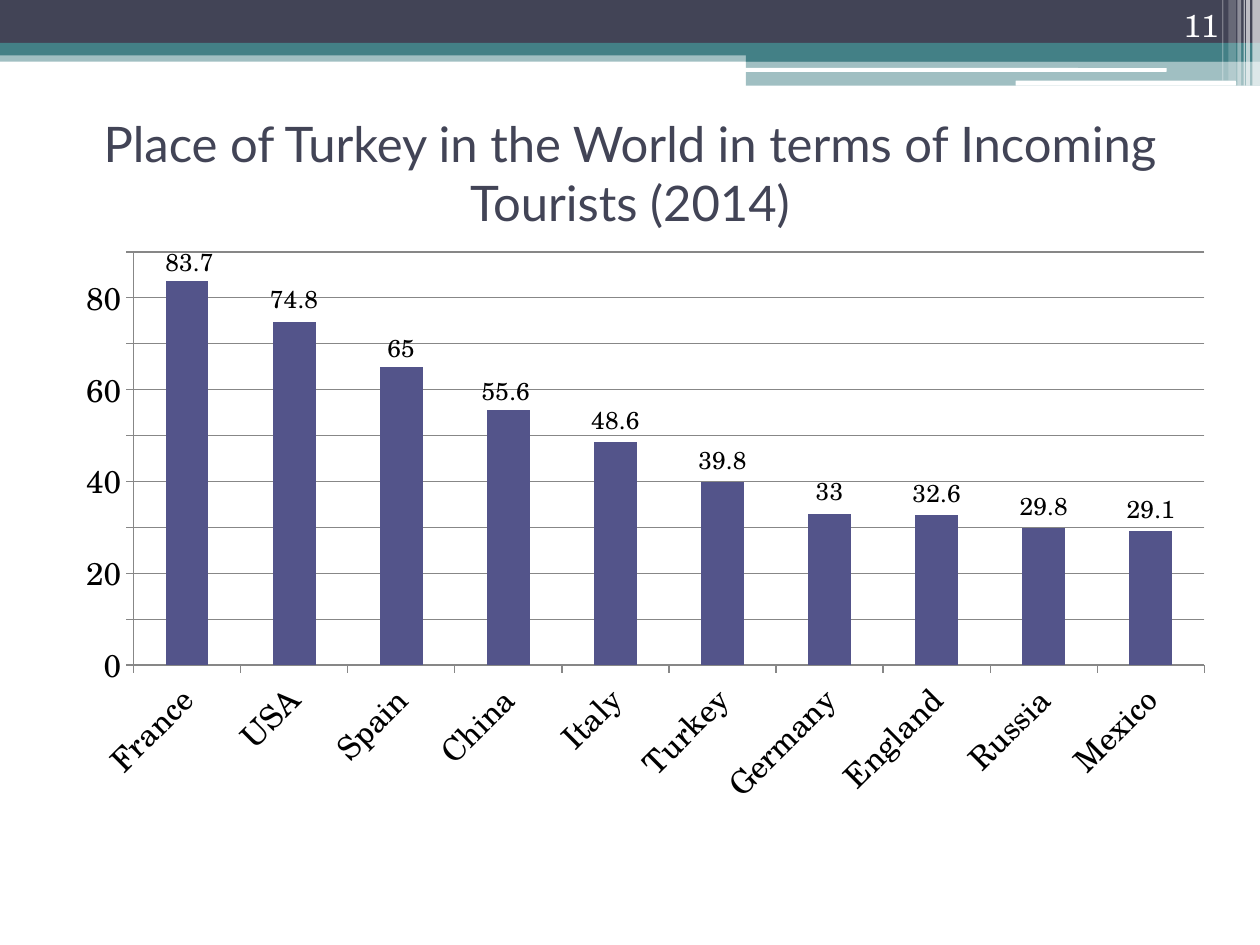
from pptx import Presentation
from pptx.chart.data import CategoryChartData
from pptx.dml.color import RGBColor
from pptx.enum.chart import XL_CHART_TYPE, XL_LABEL_POSITION, XL_TICK_MARK
from pptx.enum.shapes import MSO_SHAPE
from pptx.enum.text import MSO_ANCHOR, PP_ALIGN
from pptx.oxml.ns import qn
from pptx.util import Inches, Pt
from lxml import etree

RECT, ROUND = MSO_SHAPE.RECTANGLE, MSO_SHAPE.ROUNDED_RECTANGLE
COLUMN, OUT_END = XL_CHART_TYPE.COLUMN_CLUSTERED, XL_LABEL_POSITION.OUTSIDE_END
TICK_OUT = XL_TICK_MARK.OUTSIDE
MIDDLE, BOTTOM = MSO_ANCHOR.MIDDLE, MSO_ANCHOR.BOTTOM
CENTER, RIGHT = PP_ALIGN.CENTER, PP_ALIGN.RIGHT


class Theme:
    dark, teal, white = "424456", "438086", "FFFFFF"
    bar, grid, ink = "53548A", "878787", "000000"
    head, body = "Lato", "TeX Gyre Schola"
    big, mid, small = 28, 18, 14


# Content
TITLE = "Place of Turkey in the World in terms of Incoming Tourists (2014)"
PAGE = "11"
DATA = {
    "France": 83.7, "USA": 74.8, "Spain": 65, "China": 55.6, "Italy": 48.6,
    "Turkey": 39.8, "Germany": 33, "England": 32.6, "Russia": 29.8, "Mexico": 29.1,
}

# Chart frame, its plot area, and nudged labels, all in inches
FRAME = (0.5, 1.92, 9.25, 4.58)
PLOT = (0.56, 0.08, 8.5, 3.28)
NUDGE = {"France": (0.02, 0.03), "Spain": (0, 0.03), "China": (-0.02, 0.03)}

# Header bands: left, top, width, height, colour, opacity, shape
BANDS = [
    (0, 0.4, 10, 0.09, Theme.teal, 50, RECT),
    (0, 0, 10, 0.34, Theme.dark, 100, RECT),
    (0, 0.34, 10, 0.1, Theme.teal, 100, RECT),
    (5.92, 0.39, 4.08, 0.1, Theme.teal, 100, RECT),
    (5.92, 0.48, 4.08, 0.2, Theme.teal, 50, RECT),
    (5.91, 0.54, 3.35, 0.03, Theme.white, 100, ROUND),
    (8.06, 0.64, 1.75, 0.04, Theme.white, 100, ROUND),
]
# Stripes in the corner: left, width, height, opacity
STRIPES = [
    (9.94, 0.06, 0.68, 65), (9.89, 0.03, 0.68, 65), (9.87, 0.01, 0.68, 60),
    (9.82, 0.03, 0.68, 40), (9.75, 0.06, 0.64, 20), (9.7, 0.01, 0.64, 30),
]


def rgb(code):
    return RGBColor.from_string(code)


def place(shape, *box):
    shape.left, shape.top, shape.width, shape.height = map(Inches, box)


def style(font, size, face, color):
    font.size, font.name = Pt(size), face
    font.color.rgb = rgb(color)


def write(shape, text, size, face, color, align, anchor):
    frame = shape.text_frame
    frame.word_wrap = True
    frame.vertical_anchor = anchor
    para = frame.paragraphs[0]
    para.alignment = align
    run = para.add_run()
    run.text = text
    style(run.font, size, face, color)


def band(slide, left, top, width, height, color, alpha, kind):
    shape = slide.shapes.add_shape(kind, *map(Inches, (left, top, width, height)))
    shape.shadow.inherit = False
    shape.line.fill.background()
    shape.fill.solid()
    shape.fill.fore_color.rgb = rgb(color)
    if alpha < 100:
        tint = shape.fill._xPr.find(".//" + qn("a:srgbClr"))
        etree.SubElement(tint, qn("a:alpha")).set("val", str(alpha * 1000))


def lay_out(node, index, pairs):
    """Give a chart part a manual layout, as shares of the chart frame."""
    for old in node.findall(qn("c:layout")):
        node.remove(old)
    layout = etree.Element(qn("c:layout"))
    manual = etree.SubElement(layout, qn("c:manualLayout"))
    for tag, val in pairs:
        etree.SubElement(manual, qn("c:" + tag)).set("val", str(val))
    node.insert(index, layout)


def add_bars(slide):
    data = CategoryChartData()
    data.categories = list(DATA)
    data.add_series("Series 1", list(DATA.values()))
    chart = slide.shapes.add_chart(COLUMN, *map(Inches, FRAME), data).chart
    chart.has_legend = chart.has_title = False
    style(chart.font, Theme.mid, Theme.body, Theme.ink)

    # Plot area
    wide, high = FRAME[2:]
    shares = [size / full for size, full in zip(PLOT, (wide, high) * 2)]
    modes = [("layoutTarget", "inner"), ("xMode", "edge"), ("yMode", "edge")]
    area = chart._chartSpace.find(".//" + qn("c:plotArea"))
    lay_out(area, 0, modes + list(zip("xywh", shares)))

    # Bars and their labels
    plot = chart.plots[0]
    plot.gap_width, plot.vary_by_categories = 150, False
    bars = plot.series[0]
    bars.format.fill.solid()
    bars.format.fill.fore_color.rgb = rgb(Theme.bar)
    tags = bars.data_labels
    tags.show_value, tags.position = True, OUT_END
    style(tags.font, Theme.small, Theme.body, Theme.ink)
    for name, (right, down) in NUDGE.items():
        spot = list(DATA).index(name)
        tag = bars.points[spot].data_label
        style(tag.font, Theme.small, Theme.body, Theme.ink)
        tag.position = OUT_END
        node = tags._element.xpath(f"c:dLbl[c:idx/@val='{spot}']")[0]
        lay_out(node, 1, [("x", right / wide), ("y", down / high)])

    # Axes and grid
    cat, val = chart.category_axis, chart.value_axis
    val.minimum_scale, val.maximum_scale, val.major_unit = 0, 90, 10
    val.has_major_gridlines = True
    for axis in (cat, val):
        axis.major_tick_mark = TICK_OUT
        style(axis.tick_labels.font, Theme.mid, Theme.body, Theme.ink)
    for part in (cat, val, val.major_gridlines):
        part.format.line.color.rgb = rgb(Theme.grid)
        part.format.line.width = Pt(0.75)
    cat._element.find(".//" + qn("a:bodyPr")).set("rot", "-2700000")


def main():
    deck = Presentation()
    deck.slide_width, deck.slide_height = Inches(10), Inches(7.5)
    slide = deck.slides.add_slide(deck.slide_layouts[5])

    # Header
    for item in BANDS:
        band(slide, *item)
    for left, width, height, alpha in STRIPES:
        band(slide, left, 0, width, height, Theme.white, alpha, RECT)

    # Title, chart and page number
    title = slide.shapes.title
    place(title, 0.5, 0.83, 9, 1.08)
    write(title, TITLE, size=Theme.big, face=Theme.head, color=Theme.dark,
          align=CENTER, anchor=MIDDLE)
    add_bars(slide)
    page = slide.shapes.add_textbox(*map(Inches, (8.94, 0, 0.83, 0.4)))
    write(page, PAGE, size=Theme.mid, face=Theme.body, color=Theme.white,
          align=RIGHT, anchor=BOTTOM)
    deck.save("out.pptx")


if __name__ == "__main__":
    main()
